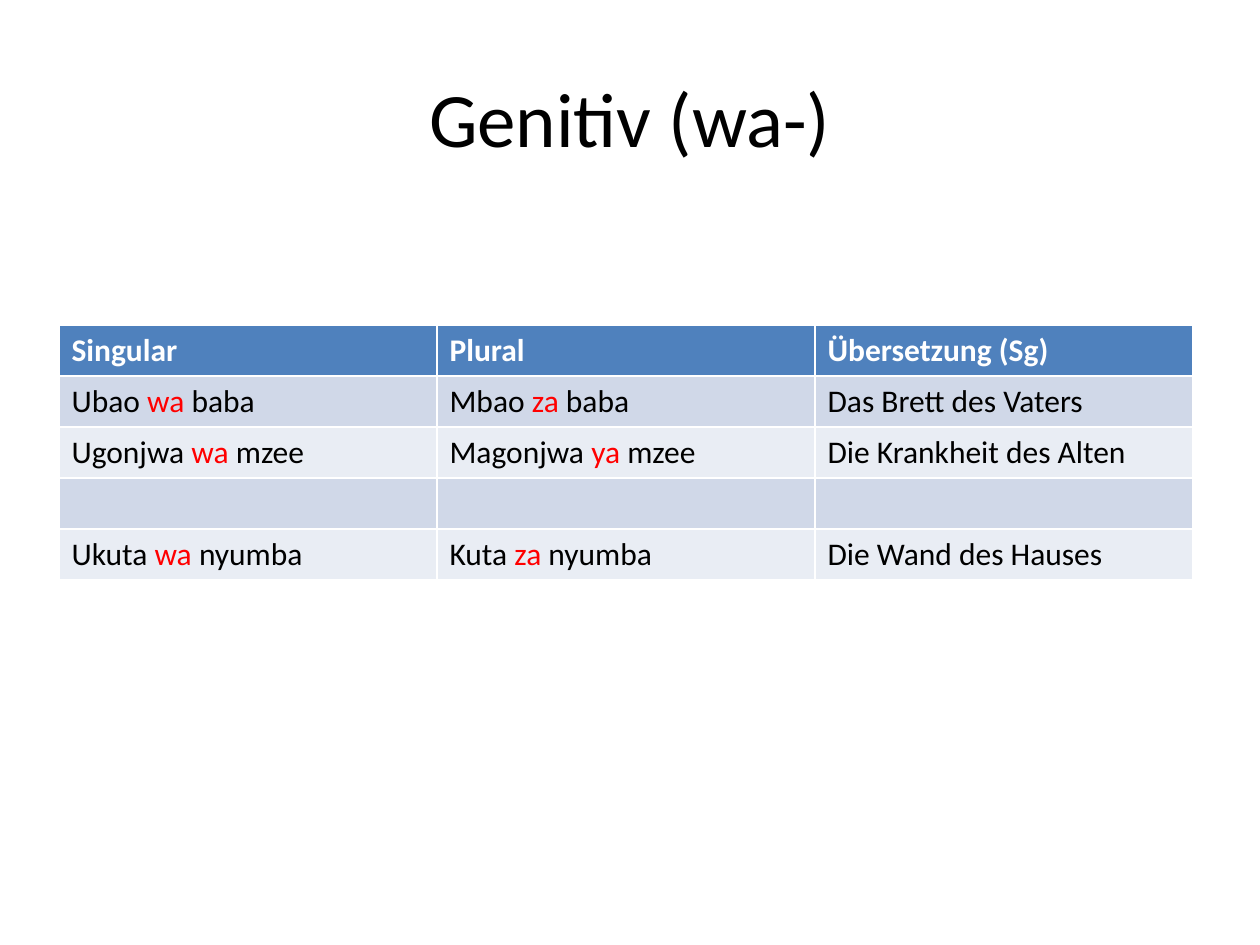
from pptx import Presentation
from pptx.dml.color import RGBColor
from pptx.enum.text import MSO_ANCHOR, PP_ALIGN
from pptx.util import Pt

CENTER = PP_ALIGN.CENTER
MIDDLE = MSO_ANCHOR.MIDDLE
SCALE = 914400 / 126
COLORS = {
    "ink": "000000",
    "mark": "FF0000",
    "white": "FFFFFF",
    "head": "4F81BD",
    "odd": "D0D8E8",
    "even": "E9EDF4",
}
TITLE = {"name": "Calibri", "size": Pt(44), "bold": False}
HEAD = {"name": "Calibri", "size": Pt(18), "bold": True}
BODY = {**HEAD, "bold": False}
ROWS = [
    ["Singular", "Plural", "Übersetzung (Sg)"],
    ["Ubao |wa| baba", "Mbao |za| baba", "Das Brett des Vaters"],
    ["Ugonjwa |wa |mzee", "Magonjwa |ya |mzee", "Die Krankheit des Alten"],
    ["", "", ""],
    ["Ukuta |wa |nyumba", "Kuta |za |nyumba", "Die Wand des Hauses"],
]


def emu(px):
    return round(px * SCALE)


def color(name):
    return RGBColor.from_string(COLORS[name])


def write(para, text, style, ink):
    for i, part in enumerate(text.split("|")):
        if not part:
            continue
        run = para.add_run()
        run.text = part
        for key, value in style.items():
            setattr(run.font, key, value)
        run.font.color.rgb = color("mark" if i % 2 else ink)


def add_title(slide, box, text):
    frame = slide.shapes.add_textbox(*map(emu, box)).text_frame
    frame.word_wrap = True
    frame.vertical_anchor = MIDDLE
    para = frame.paragraphs[0]
    para.alignment = CENTER
    write(para, text, TITLE, "ink")


def add_grid(slide, box, rows):
    shape = slide.shapes.add_table(len(rows), len(rows[0]), *map(emu, box))
    for r, row in enumerate(rows):
        fill = "odd" if r % 2 else "even"
        style, ink, fill = (BODY, "ink", fill) if r else (HEAD, "white", "head")
        for c, text in enumerate(row):
            cell = shape.table.cell(r, c)
            cell.fill.solid()
            cell.fill.fore_color.rgb = color(fill)
            write(cell.text_frame.paragraphs[0], text, style, ink)


def main():
    deck = Presentation()
    deck.slide_width, deck.slide_height = emu(1260), emu(945)
    slide = deck.slides.add_slide(deck.slide_layouts[6])
    add_title(slide, (63, 38, 1134, 157), "Genitiv (wa-)")
    add_grid(slide, (59, 325, 1134, 255), ROWS)
    deck.save("out.pptx")


if __name__ == "__main__":
    main()
